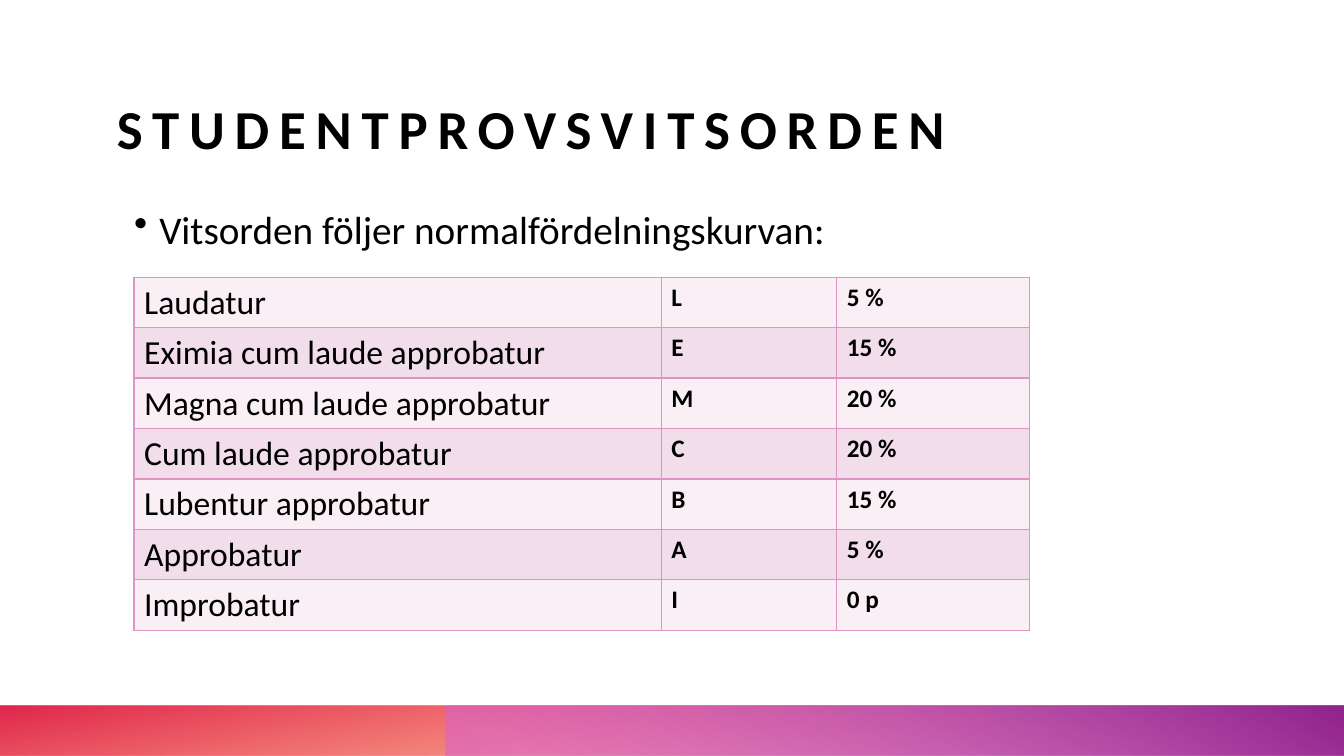
from pptx import Presentation
from pptx.util import Pt
from pptx.dml.color import RGBColor as Rgb
from pptx.enum.shapes import MSO_SHAPE as Kind
from pptx.enum.text import MSO_ANCHOR as Anchor
from pptx.oxml.ns import qn
from lxml.etree import SubElement as Sub

PX = 9144  # EMU; 100 px to the inch
THEME = dict(font="Calibri", ink="000000", edge="DE95C4",
             bands=("F9EFF5", "F2DDEA"),
             title=39.2, lead=28, name=24, mark=18)


def style(para, size, bold=False):
    font = para.font
    font.name, font.size, font.bold = THEME["font"], Pt(size), bold
    font.color.rgb = Rgb.from_string(THEME["ink"])


def add_text(box, text, size, bold=False):
    shape = slide.shapes.add_textbox(*[n * PX for n in box])
    frame = shape.text_frame
    frame.word_wrap = True
    frame.margin_left = frame.margin_right = 0
    frame.margin_top = frame.margin_bottom = 0
    para = frame.paragraphs[0]
    para.text = text
    style(para, size, bold)
    return shape


deck = Presentation()
deck.slide_width, deck.slide_height = 1333 * PX, 750 * PX
slide = deck.slides.add_slide(deck.slide_layouts[6])

# Footer bars: left edge, clockwise angle, stops (position, colour, opacity %)
bars = [
    (0, 80, [(0, "DA002F", 85), (0.86, "FE4A00", 28)]),
    (442, 300, [(0.09, "D861D4", 55), (0.99, "92248E", 100)]),
]
for left, angle, stops in bars:
    bar = slide.shapes.add_shape(Kind.RECTANGLE, left * PX, 700 * PX,
                                 (1333 - left) * PX, 50 * PX)
    bar.shadow.inherit = False
    bar.line.fill.background()
    bar.fill.gradient()
    bar.fill.gradient_angle = 360 - angle
    for stop, (place, color, _) in zip(bar.fill.gradient_stops, stops):
        stop.position = place
        stop.color.rgb = Rgb.from_string(color)
    for tint, (_, _, alpha) in zip(bar.element.iter(qn("a:srgbClr")), stops):
        Sub(tint, qn("a:alpha"), val=str(alpha * 1000))

# Title with wide letter spacing
title = add_text((116, 34, 970, 125), "STUDENTPROVSVITSORDEN",
                 THEME["title"], True)
title.text_frame.vertical_anchor = Anchor.BOTTOM
for run in title.element.iter(qn("a:r")):
    run.get_or_add_rPr().set("spc", "700")

# Grade table
grades = [
    ("Laudatur", "L", "5 %"),
    ("Eximia cum laude approbatur", "E", "15 %"),
    ("Magna cum laude approbatur", "M", "20 %"),
    ("Cum laude approbatur", "C", "20 %"),
    ("Lubentur approbatur", "B", "15 %"),
    ("Approbatur", "A", "5 %"),
    ("Improbatur", "I", "0 p"),
]
table = slide.shapes.add_table(len(grades), 3, 133 * PX, 275 * PX,
                               888 * PX, 350 * PX).table
table.first_row = table.horz_banding = False
for col, width in zip(table.columns, (523, 174, 191)):
    col.width = width * PX
for r, grade in enumerate(grades):
    for c, text in enumerate(grade):
        cell = table.cell(r, c)
        para = cell.text_frame.paragraphs[0]
        para.text = text
        style(para, THEME["mark" if c else "name"], c > 0)
        props = cell._tc.get_or_add_tcPr()
        for side in ("lnL", "lnR", "lnT", "lnB"):
            line = Sub(props, qn("a:" + side), w="12700")
            Sub(Sub(line, qn("a:solidFill")), qn("a:srgbClr"),
                val=THEME["edge"])
        cell.fill.solid()
        cell.fill.fore_color.rgb = Rgb.from_string(THEME["bands"][r % 2])

# Bulleted lead line
lead = add_text((133, 194, 1120, 433),
                "Vitsorden följer normalfördelningskurvan:", THEME["lead"])
para = lead.text_frame.paragraphs[0]
para.line_spacing, para.space_before = 1.2, Pt(10)
for props in lead.element.iter(qn("a:pPr")):
    props.set("marL", str(25 * PX))
    props.set("indent", str(-25 * PX))
    bullet = props.makeelement(qn("a:buChar"), {"char": "•"})
    props.find(qn("a:defRPr")).addprevious(bullet)

deck.save("out.pptx")
